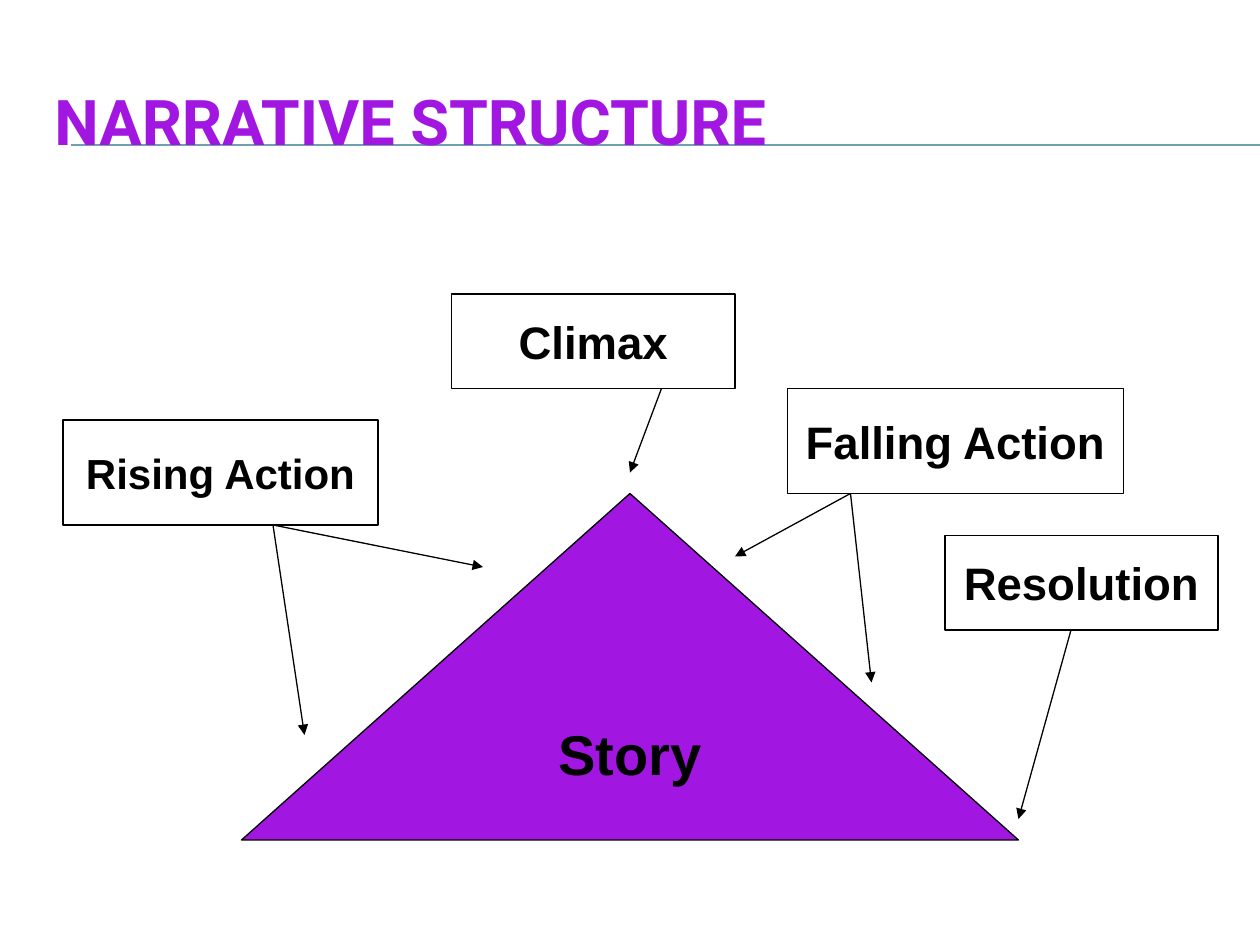
from lxml.etree import SubElement
from pptx import Presentation
from pptx.dml.color import RGBColor
from pptx.enum.shapes import MSO_CONNECTOR, MSO_SHAPE
from pptx.enum.text import MSO_ANCHOR, PP_ALIGN
from pptx.oxml.ns import qn
from pptx.util import Emu, Pt

# Content: lengths in px, 96 to the inch
SLIDE = (960, 720)
TITLE = ("NARRATIVE STRUCTURE", (32, 48, 912, 88))
RULES = {"left": 54, "tops": (110, 111)}
STORY = ("Story", (184, 376, 592, 264))
STAGES = [  # label, box, size name, x where arrows leave the bottom edge, arrow tips
    ("Rising Action", (48, 320, 240, 80), "small", 208, [(232, 560), (368, 432)]),
    ("Climax", (344, 224, 216, 72), "label", 504, [(480, 360)]),
    ("Falling Action", (600, 296, 256, 80), "label", 648, [(560, 424), (664, 520)]),
    ("Resolution", (720, 408, 208, 72), "label", 816, [(776, 624)]),
]

THEME = {
    "purple": RGBColor(0xA1, 0x16, 0xE0),
    "teal": RGBColor(0x6E, 0xA0, 0xB0),
    "black": RGBColor(0, 0, 0),
    "white": RGBColor(255, 255, 255),
    "line": Pt(0.75),
    "title": Pt(36), "story": Pt(32), "label": Pt(26), "small": Pt(24),
    "title_font": "Roboto", "font": "Arial",
}


def px(*lengths):
    return [Emu(n * 9525) for n in lengths]


def write(shape, text, color, size, font, align, wrap):
    tf = shape.text_frame
    tf.word_wrap = wrap
    tf.vertical_anchor = MSO_ANCHOR.MIDDLE
    p = tf.paragraphs[0]
    p.alignment = align
    r = p.add_run()
    r.text = text
    style = {"name": THEME[font], "size": THEME[size], "bold": True}
    for name, value in style.items():
        setattr(r.font, name, value)
    r.font.color.rgb = THEME[color]


def add_block(s, kind, text, box, fill, size):
    sp = s.shapes.add_shape(kind, *px(*box))
    sp.shadow.inherit = False
    sp.fill.solid()
    sp.fill.fore_color.rgb = THEME[fill]
    sp.line.color.rgb = THEME["black"]
    sp.line.width = THEME["line"]
    write(sp, text, "black", size, "font", PP_ALIGN.CENTER, False)


def add_line(s, start, end, color, arrow=False):
    cx = s.shapes.add_connector(MSO_CONNECTOR.STRAIGHT, *px(*start, *end))
    cx.line.color.rgb = THEME[color]
    cx.line.width = THEME["line"]
    if arrow:
        SubElement(cx.line._get_or_add_ln(), qn("a:tailEnd"), type="triangle")
    SubElement(cx._element.spPr, qn("a:effectLst"))


def main():
    prs = Presentation()
    prs.slide_width, prs.slide_height = px(*SLIDE)
    s = prs.slides.add_slide(prs.slide_layouts[6])

    # Title over its double rule
    for y in RULES["tops"]:
        add_line(s, (RULES["left"], y), (SLIDE[0], y), "teal")
    text, box = TITLE
    write(s.shapes.add_textbox(*px(*box)), text, "purple", "title",
          "title_font", PP_ALIGN.LEFT, True)

    # Story triangle
    text, box = STORY
    add_block(s, MSO_SHAPE.ISOSCELES_TRIANGLE, text, box, "purple", "story")

    # Stages, each with arrows from its bottom edge
    for label, box, size, x, tips in STAGES:
        bottom = box[1] + box[3]
        for tip in tips:
            add_line(s, (x, bottom), tip, "black", arrow=True)
        add_block(s, MSO_SHAPE.RECTANGLE, label, box, "white", size)

    prs.save("out.pptx")


if __name__ == "__main__":
    main()
